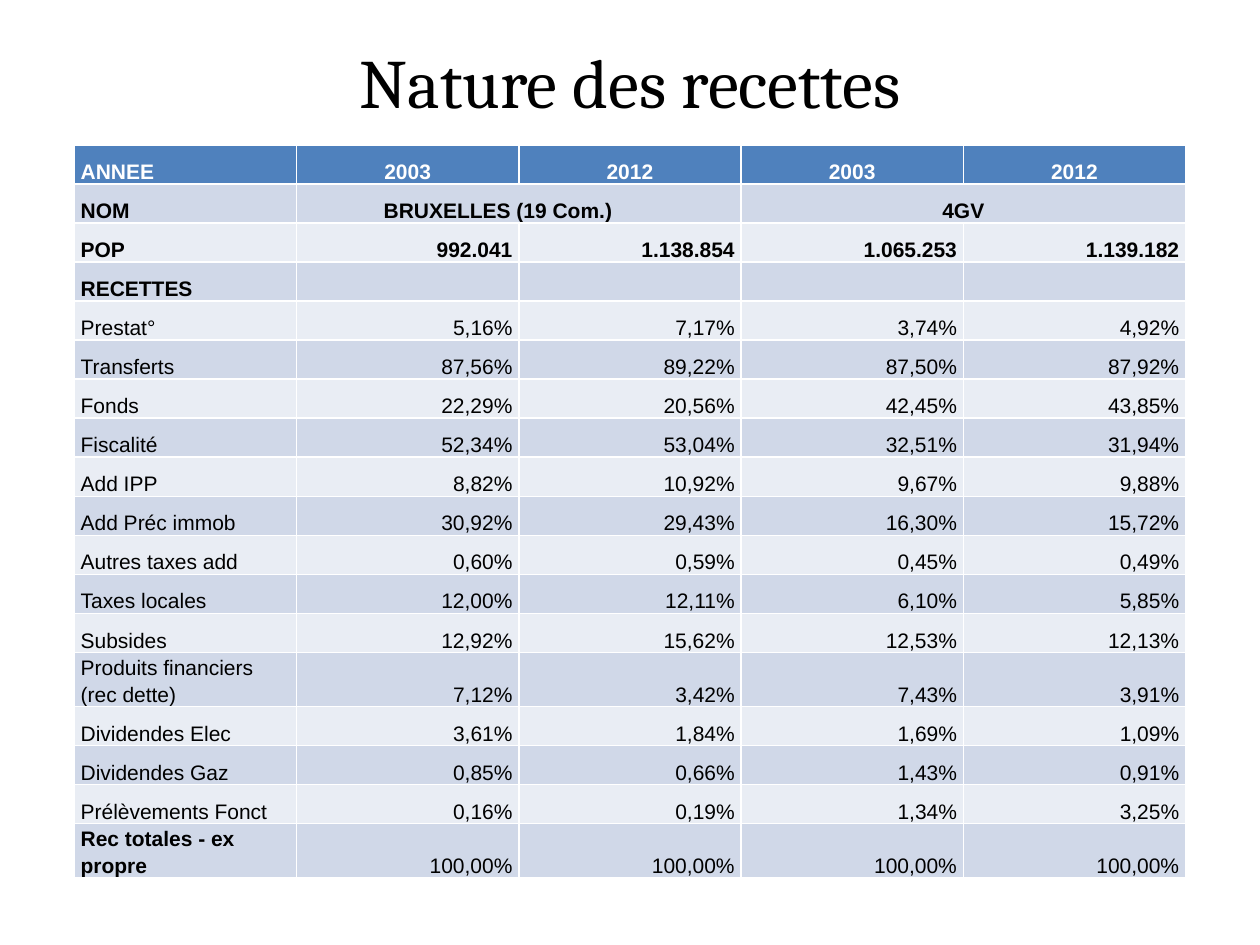
from dataclasses import dataclass
from typing import NamedTuple

from pptx import Presentation
from pptx.dml.color import RGBColor
from pptx.enum.text import MSO_ANCHOR, PP_ALIGN
from pptx.util import Inches, Pt


@dataclass(frozen=True)
class Theme:
    head: str = "4F81BD"
    dark: str = "D0D8E8"
    light: str = "E9EDF4"
    white: str = "FFFFFF"
    black: str = "000000"
    serif: str = "Cambria"
    sans: str = "Arial"
    large: float = 39.6
    small: float = 12


class Row(NamedTuple):
    label: str
    values: str = ""
    bold: bool = False
    align: PP_ALIGN = PP_ALIGN.RIGHT
    all_bold: bool = False


THEME = Theme()
PAD = 0.05
CENTER = PP_ALIGN.CENTER

ROWS = [
    Row("ANNEE", "2003 2012 2003 2012", True, CENTER, True),
    Row("NOM", bold=True),
    Row("POP", "992.041 1.138.854 1.065.253 1.139.182", True, all_bold=True),
    Row("RECETTES", bold=True),
    Row("Prestat°", "5,16% 7,17% 3,74% 4,92%"),
    Row("Transferts", "87,56% 89,22% 87,50% 87,92%"),
    Row("Fonds", "22,29% 20,56% 42,45% 43,85%"),
    Row("Fiscalité", "52,34% 53,04% 32,51% 31,94%"),
    Row("Add IPP", "8,82% 10,92% 9,67% 9,88%"),
    Row("Add Préc immob", "30,92% 29,43% 16,30% 15,72%"),
    Row("Autres taxes add", "0,60% 0,59% 0,45% 0,49%"),
    Row("Taxes locales", "12,00% 12,11% 6,10% 5,85%"),
    Row("Subsides", "12,92% 15,62% 12,53% 12,13%"),
    Row("Produits financiers (rec dette)", "7,12% 3,42% 7,43% 3,91%"),
    Row("Dividendes Elec", "3,61% 1,84% 1,69% 1,09%"),
    Row("Dividendes Gaz", "0,85% 0,66% 1,43% 0,91%"),
    Row("Prélèvements Fonct", "0,16% 0,19% 1,34% 3,25%"),
    Row("Rec totales - ex propre", "100,00% 100,00% 100,00% 100,00%", True),
]


def write(frame, text: str, *, size: float = THEME.small, font: str = THEME.sans,
          color: str = THEME.black, bold: bool = False,
          align: PP_ALIGN = PP_ALIGN.LEFT, space: float = 1.15) -> None:
    para = frame.paragraphs[0]
    para.alignment = align
    para.line_spacing = space
    run = para.add_run()
    run.text = text
    run.font.size = Pt(size)
    run.font.name = font
    run.font.bold = bold
    run.font.color.rgb = RGBColor.from_string(color)


def dress(cell, fill: str) -> None:
    cell.fill.solid()
    cell.fill.fore_color.rgb = RGBColor.from_string(fill)
    cell.vertical_anchor = MSO_ANCHOR.BOTTOM
    cell.margin_left = cell.margin_right = Inches(PAD)
    cell.margin_top = cell.margin_bottom = 0
    # Keep empty cells as low as the filled ones
    end = cell.text_frame.paragraphs[0]._p.get_or_add_endParaRPr()
    end.set("sz", str(THEME.small * 100))


def draw_row(table, index: int, row: Row) -> None:
    head = index == 0
    fill = THEME.head if head else THEME.dark if index % 2 else THEME.light
    color = THEME.white if head else THEME.black
    cells = list(table.rows[index].cells)
    for cell in cells:
        dress(cell, fill)
    write(cells[0].text_frame, row.label, color=color, bold=row.bold)
    for cell, value in zip(cells[1:], row.values.split()):
        write(cell.text_frame, value, color=color, bold=row.all_bold, align=row.align)


def draw_group(table, col: int, name: str, shift: float = 0) -> None:
    cell = table.cell(1, col)
    cell.merge(table.cell(1, col + 1))
    cell.margin_right = Inches(PAD + shift)
    write(cell.text_frame, name, bold=True, align=CENTER)


def main() -> None:
    deck = Presentation()
    deck.slide_width, deck.slide_height = Inches(10), Inches(7.5)
    slide = deck.slides.add_slide(deck.slide_layouts[5])

    # Title
    title = slide.shapes.title
    title.left, title.top = Inches(0.5), Inches(0.3)
    title.width, title.height = Inches(9), Inches(0.69)
    title.text_frame.vertical_anchor = MSO_ANCHOR.MIDDLE
    write(title.text_frame, "Nature des recettes", size=THEME.large,
          font=THEME.serif, align=CENTER, space=1.0)

    # Revenue table; its default style draws the white borders
    table = slide.shapes.add_table(len(ROWS), 5, Inches(0.59), Inches(1.15),
                                   Inches(8.82), Inches(5.58)).table
    for line in table.rows:
        line.height = Inches(0.31)
    for index, row in enumerate(ROWS):
        draw_row(table, index, row)

    # Names over each pair of years
    draw_group(table, 1, "BRUXELLES (19 Com.)", shift=0.33)
    draw_group(table, 3, "4GV")

    deck.save("out.pptx")


if __name__ == "__main__":
    main()
